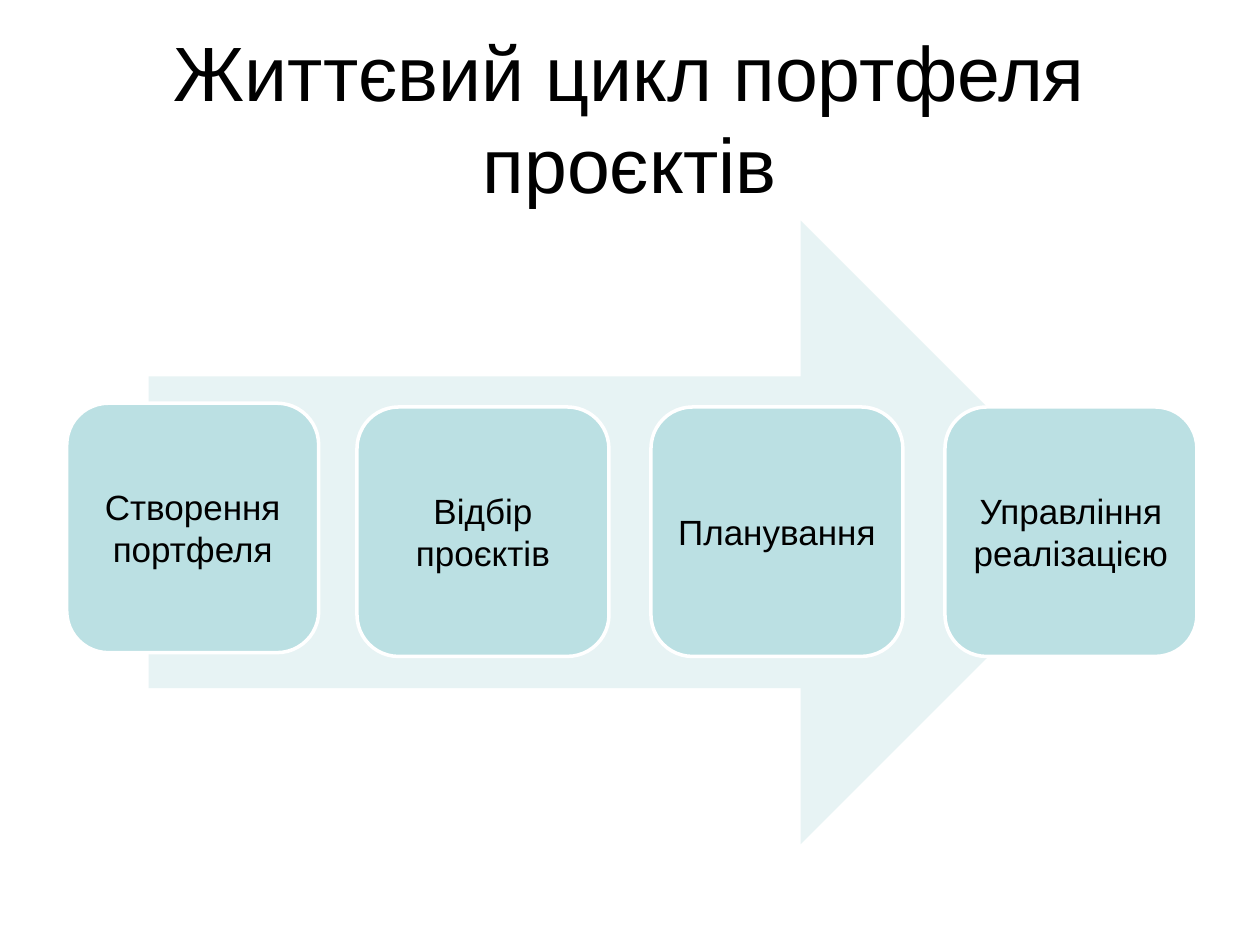
from pptx import Presentation
from pptx.dml.color import RGBColor
from pptx.enum.shapes import MSO_SHAPE
from pptx.enum.text import MSO_ANCHOR, MSO_AUTO_SIZE, PP_ALIGN
from pptx.util import Inches, Pt

TITLE = "Життєвий цикл портфеля проєктів"
STAGES = ["Створення портфеля", "Відбір проєктів", "Планування", "Управління реалізацією"]

BLACK = RGBColor(0x00, 0x00, 0x00)
WHITE = RGBColor(0xFF, 0xFF, 0xFF)
TEAL = RGBColor(0xBB, 0xE0, 0xE3)
PALE = RGBColor(0xE7, 0xF3, 0xF4)

WIDTH, HEIGHT = 10, 7.5
MARGIN = 0.05 * WIDTH
CARD_W, CARD_H, CARD_TOP = 2, 1.98, 3.23
STEP = (WIDTH - 2 * MARGIN - CARD_W) / (len(STAGES) - 1)
NUDGE = 0.03  # the first card sits slightly right of and above the row


def place(shape, *box):
    shape.left, shape.top, shape.width, shape.height = map(Inches, box)


def write(shape, text, size, inset):
    frame = shape.text_frame
    frame.text = text
    form = {"word_wrap": True, "auto_size": MSO_AUTO_SIZE.NONE,
            "vertical_anchor": MSO_ANCHOR.MIDDLE}
    for side in ("left", "top", "right", "bottom"):
        form["margin_" + side] = Inches(inset)
    for name, value in form.items():
        setattr(frame, name, value)
    para = frame.paragraphs[0]
    para.alignment = PP_ALIGN.CENTER
    font = para.runs[0].font
    font.name, font.size = "Arial", Pt(size)
    font.color.rgb = BLACK


def draw(group, kind, fill, *box):
    shape = group.shapes.add_shape(kind, *map(Inches, box))
    shape.shadow.inherit = False
    shape.fill.solid()
    shape.fill.fore_color.rgb = fill
    shape.line.fill.background()
    return shape


def main():
    deck = Presentation()
    deck.slide_width, deck.slide_height = Inches(WIDTH), Inches(HEIGHT)
    slide = deck.slides.add_slide(deck.slide_layouts[5])

    title = slide.shapes.title
    place(title, MARGIN, 0.04 * HEIGHT, WIDTH - 2 * MARGIN, HEIGHT / 6)
    write(title, TITLE, 44, 0.05)

    cycle = slide.shapes.add_group_shape()
    draw(cycle, MSO_SHAPE.RIGHT_ARROW, PALE, 1.18, 1.75, 7.65, 4.95)
    for i, stage in enumerate(STAGES):
        shift = 0 if i else NUDGE
        card = draw(cycle, MSO_SHAPE.ROUNDED_RECTANGLE, TEAL,
                    MARGIN + i * STEP + shift, CARD_TOP - shift, CARD_W, CARD_H)
        card.line.color.rgb = WHITE
        card.line.width = Pt(2)
        write(card, stage, 20, 0.08)

    deck.save("out.pptx")


if __name__ == "__main__":
    main()
